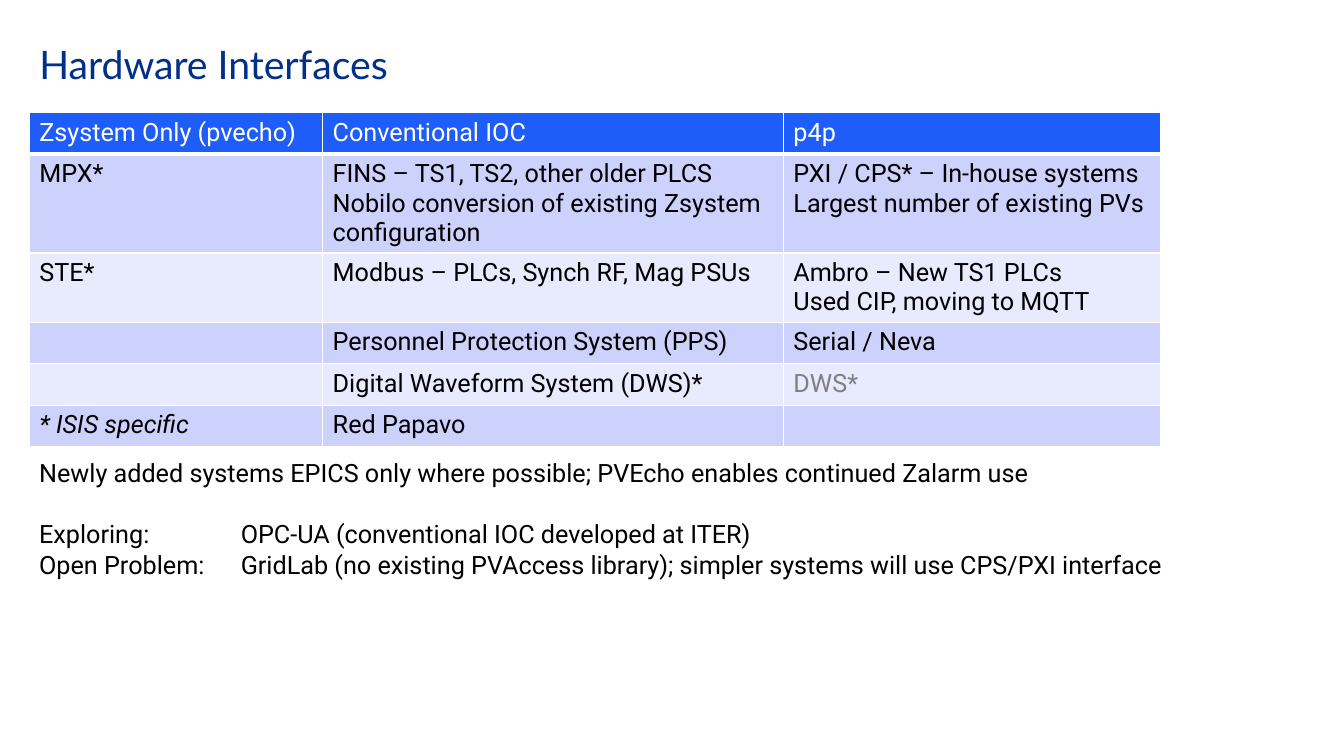
from lxml import etree
from pptx import Presentation
from pptx.dml.color import RGBColor
from pptx.enum import text
from pptx.oxml import ns
from pptx import util as u

COLORS = {"title": "003088", "header": "1E5DF8", "odd": "CDD2FC", "even": "E8EAFE",
          "white": "FFFFFF", "black": "000000", "grey": "808080"}
LEFT = u.Inches(0.29)


def add_run(paragraph, wording, color="black", size=18, font="Roboto", italic=False):
    run = paragraph.add_run()
    run.text = wording
    run.font.name, run.font.size, run.font.italic = font, u.Pt(size), italic
    run.font.color.rgb = RGBColor.from_string(COLORS[color])


def add_borders(cell, bottom):
    properties = cell._tc.get_or_add_tcPr()
    for side, width in (("L", 1), ("R", 1), ("T", 1), ("B", bottom)):
        line = etree.SubElement(properties, ns.qn(f"a:ln{side}"), w=str(u.Pt(width)))
        fill = etree.SubElement(line, ns.qn("a:solidFill"))
        etree.SubElement(fill, ns.qn("a:srgbClr"), val=COLORS["white"])


prs = Presentation()
prs.slide_width, prs.slide_height = u.Inches(13.33), u.Inches(7.5)
slide = prs.slides.add_slide(prs.slide_layouts[5])

# Title
title = slide.shapes.title
title.left, title.top = LEFT, u.Inches(0.4)
title.width, title.height = u.Inches(6.92), u.Inches(0.63)
title.text_frame.auto_size = text.MSO_AUTO_SIZE.NONE
title.text_frame.vertical_anchor = text.MSO_ANCHOR.TOP
heading = title.text_frame.paragraphs[0]
heading.alignment = text.PP_ALIGN.LEFT
heading.line_spacing = 0.9
add_run(heading, "Hardware Interfaces", "title", 28, "Lato")

# Interface table: each cell is a list of paragraphs
interfaces = [
    [["Zsystem Only (pvecho)"], ["Conventional IOC"], ["p4p"]],
    [["MPX*"],
     ["FINS – TS1, TS2, other older PLCS",
      "Nobilo conversion of existing Zsystem configuration"],
     ["PXI / CPS* – In-house systems", "Largest number of existing PVs"]],
    [["STE*"], ["Modbus – PLCs, Synch RF, Mag PSUs"],
     ["Ambro – New TS1 PLCs", "Used CIP, moving to MQTT"]],
    [[], ["Personnel Protection System (PPS)"], ["Serial / Neva"]],
    [[], ["Digital Waveform System (DWS)*"], ["DWS*"]],
    [["* ISIS specific"], ["Red Papavo"], []],
]
column_widths = [2.91, 4.57, 3.74]
row_heights = [0.41, 0.98, 0.69, 0.41, 0.41, 0.41]
table = slide.shapes.add_table(
    len(row_heights), len(column_widths), LEFT, u.Inches(1.12),
    u.Inches(sum(column_widths)), u.Inches(sum(row_heights))).table
for column, width in zip(table.columns, column_widths):
    column.width = u.Inches(width)

for r, (row, height) in enumerate(zip(interfaces, row_heights)):
    table.rows[r].height = u.Inches(height)
    band = "header" if r == 0 else "odd" if r % 2 else "even"
    for c, entries in enumerate(row):
        cell = table.cell(r, c)
        add_borders(cell, bottom=3 if r == 0 else 1)
        cell.fill.solid()
        cell.fill.fore_color.rgb = RGBColor.from_string(COLORS[band])
        for i, entry in enumerate(entries):
            frame = cell.text_frame
            paragraph = frame.add_paragraph() if i else frame.paragraphs[0]
            color = "white" if r == 0 else "grey" if entry == "DWS*" else "black"
            add_run(paragraph, entry, color, italic=entry.startswith("*"))

# Remarks below the table, with a tab stop for the two labelled lines
remarks = [
    "Newly added systems EPICS only where possible; PVEcho enables continued Zalarm use",
    "Exploring:\tOPC-UA (conventional IOC developed at ITER)",
    "Open Problem:\tGridLab (no existing PVAccess library); "
    "simpler systems will use CPS/PXI interface",
]
notes = slide.shapes.add_textbox(
    LEFT, u.Inches(4.49), u.Inches(11.8), u.Inches(1.31)).text_frame
notes.word_wrap = True
notes.auto_size = text.MSO_AUTO_SIZE.SHAPE_TO_FIT_TEXT
for i, remark in enumerate(remarks):
    paragraph = notes.add_paragraph() if i else notes.paragraphs[0]
    if i == 1:
        paragraph.space_before = u.Pt(22)
    if "\t" in remark:
        stops = etree.SubElement(paragraph._p.get_or_add_pPr(), ns.qn("a:tabLst"))
        etree.SubElement(stops, ns.qn("a:tab"), pos=str(u.Inches(2)), algn="l")
    add_run(paragraph, remark)

prs.save("out.pptx")
